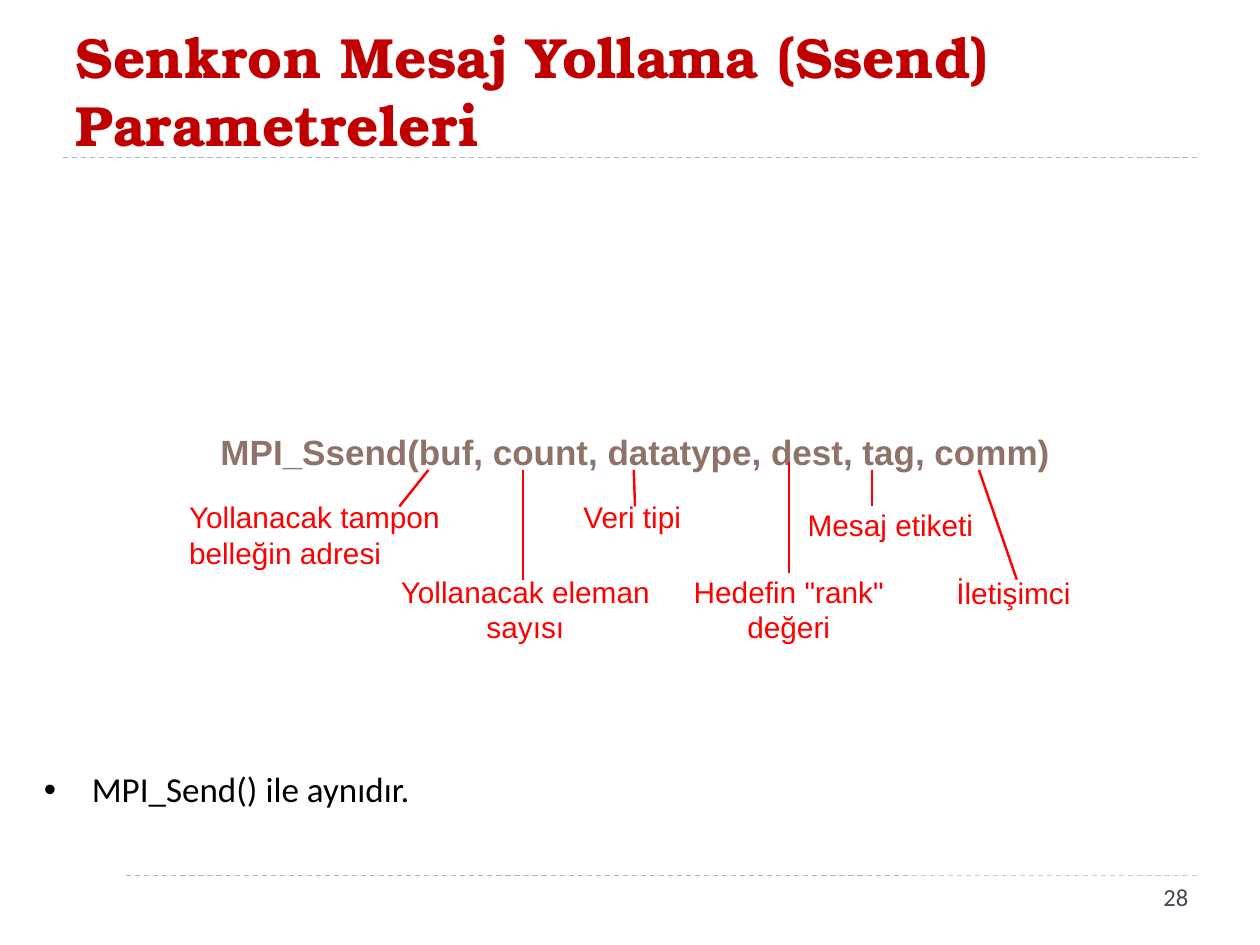
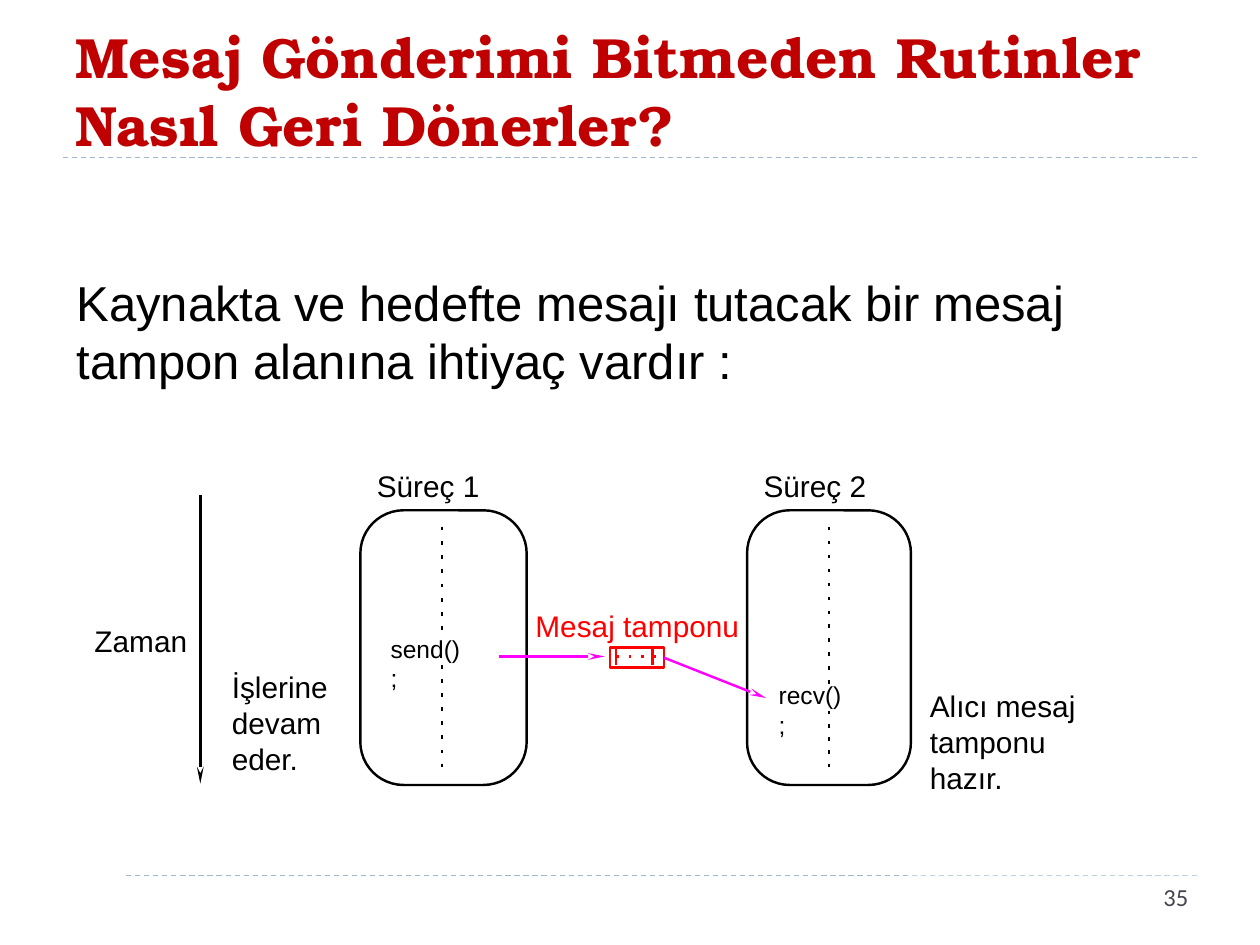
from lxml import etree
from pptx import Presentation
from pptx.dml.color import RGBColor
from pptx.enum.dml import MSO_LINE
from pptx.enum.shapes import MSO_CONNECTOR, MSO_SHAPE
from pptx.enum.text import MSO_ANCHOR, MSO_AUTO_SIZE, PP_ALIGN
from pptx.oxml.ns import qn
from pptx.util import Inches, Pt

STRAIGHT = MSO_CONNECTOR.STRAIGHT
RECTANGLE = MSO_SHAPE.RECTANGLE
ROUNDED = MSO_SHAPE.ROUNDED_RECTANGLE
DASH = MSO_LINE.DASH
LEFT, CENTER, RIGHT = PP_ALIGN.LEFT, PP_ALIGN.CENTER, PP_ALIGN.RIGHT
TOP, MIDDLE = MSO_ANCHOR.TOP, MSO_ANCHOR.MIDDLE
FIXED, GROW = MSO_AUTO_SIZE.NONE, MSO_AUTO_SIZE.SHAPE_TO_FIT_TEXT
TOP_SIDE, RIGHT_SIDE = 0, 3

COLORS = {
    "title": "C00000",
    "rule": "9FB8CD",
    "paper": "FFFFFF",
    "number": "464653",
    "call": "8E736A",
    "red": "FF0000",
    "ink": "000000",
    "message": "FF00FF",
}


def color(name):
    return RGBColor.from_string(COLORS[name])


def write(frame, text, size=17, font="Arial", ink="ink", bold=False, align=LEFT):
    para = frame.paragraphs[0]
    para.alignment = align
    for index, line in enumerate(text.split("\n")):
        if index:
            para.add_line_break()
        span = para.add_run()
        span.text = line
        span.font.size = Pt(size)
        span.font.name = font
        span.font.bold = bold
        span.font.color.rgb = color(ink)
    return para


class Lecture:
    def __init__(self):
        self.deck = Presentation()
        self.deck.slide_width = Inches(10)
        self.deck.slide_height = Inches(7.5)
        self.page = None

    def start_page(self, title, number):
        self.page = self.deck.slides.add_slide(self.deck.slide_layouts[5])
        for height in (6.95, 1.25):
            self.line((0.5, height), (9.5, height), "rule", width=0.75, dash=DASH)
        self.shape(RECTANGLE, 0.35, 6.82, 0.63, 0.63, fill="paper")
        self.title(title)
        box = self.shape(RECTANGLE, 7.2, 6.95, 2.33, 0.4, fill="paper")
        box.text_frame.vertical_anchor = TOP
        write(box.text_frame, str(number), size=14, font="Calibri", ink="number", align=RIGHT)

    def title(self, text):
        box = self.page.shapes.title
        box.left, box.top = Inches(0.5), Inches(0.17)
        box.width, box.height = Inches(9), Inches(1.08)
        frame = box.text_frame
        frame.word_wrap = True
        frame.auto_size = FIXED
        frame.vertical_anchor = MIDDLE
        write(frame, text, size=32.4, font="TeX Gyre Bonum", ink="title", bold=True)

    def label(self, text, left, top, width, height, wrap=False, **style):
        box = self.page.shapes.add_textbox(
            Inches(left), Inches(top), Inches(width), Inches(height))
        frame = box.text_frame
        frame.word_wrap = wrap
        frame.auto_size = GROW
        frame.margin_left = frame.margin_right = 0
        frame.margin_top = frame.margin_bottom = 0
        write(frame, text, **style)
        return box

    def body(self, text, left, top, width, height, bullet=False, **style):
        box = self.page.shapes.add_textbox(
            Inches(left), Inches(top), Inches(width), Inches(height))
        box.text_frame.word_wrap = True
        para = write(box.text_frame, text, **style)
        if bullet:
            para.line_spacing = 0.9
            properties = para._p.get_or_add_pPr()
            properties.set("marL", str(Inches(0.38)))
            properties.set("indent", str(-Inches(0.38)))
            etree.SubElement(properties, qn("a:buFont"), typeface="Arial")
            etree.SubElement(properties, qn("a:buChar"), char="•")

    def shape(self, kind, left, top, width, height, fill=None, line=None):
        box = self.page.shapes.add_shape(
            kind, Inches(left), Inches(top), Inches(width), Inches(height))
        box.shadow.inherit = False
        if fill:
            box.fill.solid()
            box.fill.fore_color.rgb = color(fill)
        else:
            box.fill.background()
        if line:
            box.line.color.rgb = color(line)
            box.line.width = Pt(1.38)
        else:
            box.line.fill.background()
        return box

    def line(self, start, end, ink="ink", width=1.38, dash=None, arrow=False):
        link = self.page.shapes.add_connector(
            STRAIGHT, *(Inches(value) for value in (*start, *end)))
        link.line.color.rgb = color(ink)
        link.line.width = Pt(width)
        if dash:
            link.line.dash_style = dash
        if arrow:
            etree.SubElement(link.line._get_or_add_ln(), qn("a:tailEnd"),
                             type="stealth", w="sm", len="lg")
        etree.SubElement(link._element.spPr, qn("a:effectLst"))
        return link

    def ticks(self, center, first, last, count):
        pitch = (last - first) / (count - 1)
        for index in range(count):
            top = first + index * pitch
            self.line((center, top), (center, top + 0.03))


def build_parameters(lecture):
    lecture.start_page("Senkron Mesaj Yollama (Ssend) Parametreleri", 28)
    lecture.label("MPI_Ssend(buf, count, datatype, dest, tag, comm)",
                  1.75, 3.42, 6.63, 0.34, size=20, ink="call", bold=True)
    parameters = [
        ("Yollanacak tampon\nbelleğin adresi", (1.5, 3.96, 2.01, 0.57), LEFT,
         (3.4, 3.73), (3.17, 4.02)),
        ("Yollanacak eleman\nsayısı", (3.17, 4.55, 2, 0.57), CENTER,
         (4.15, 3.73), (4.15, 4.6)),
        ("Veri tipi", (4.63, 3.96, 0.78, 0.29), LEFT, (5.03, 3.73), (5.04, 4.02)),
        ("Mesaj etiketi", (6.41, 4.02, 1.33, 0.29), LEFT, (6.92, 3.73), (6.92, 4.02)),
        ("İletişimci", (7.59, 4.56, 0.91, 0.29), LEFT, (7.77, 3.73), (8.07, 4.6)),
    ]
    for text, place, align, start, end in parameters:
        lecture.label(text, *place, ink="red", align=align)
        lecture.line(start, end, "red")
    target = lecture.label('Hedefin "rank"\ndeğeri', 5.5, 4.55, 1.52, 0.57,
                           ink="red", align=CENTER)
    lecture.line((6.26, 3.67), (6.26, 4.55), "red").end_connect(target, TOP_SIDE)
    lecture.body("MPI_Send() ile aynıdır.", 0.25, 6.08, 9.58, 0.75,
                 bullet=True, size=20, font="Calibri")


def build_buffering(lecture):
    lecture.start_page("Mesaj Gönderimi Bitmeden Rutinler Nasıl Geri Dönerler?", 35)
    lecture.body("Kaynakta ve hedefte mesajı tutacak bir mesaj tampon alanına ihtiyaç vardır :",
                 0.51, 2.11, 8.98, 1.04, size=28)

    processes = [
        ("Süreç 1", 2.99, 2.86, 1.32, 3.51, [(4.18, 4.97, 8), (5.28, 6.06, 8)]),
        ("Süreç 2", 6.06, 5.93, 1.3, 6.58, [(4.18, 5.4, 12), (5.64, 6.06, 5)]),
    ]
    for name, name_left, left, width, center, runs in processes:
        lecture.label(name, name_left, 3.71, 0.82, 0.29)
        lecture.shape(ROUNDED, left, 4.05, width, 2.18, line="ink").adjustments[0] = 0.26
        for run in runs:
            lecture.ticks(center, *run)
    lecture.label("send();", 3.1, 5.03, 0.6, 0.23, wrap=True, size=14)
    lecture.label("recv();", 6.18, 5.4, 0.55, 0.23, wrap=True, size=14)

    lecture.label("Mesaj tamponu", 4.25, 4.82, 1.63, 0.29, ink="red")
    buffer = lecture.shape(RECTANGLE, 4.84, 5.14, 0.43, 0.16, line="red")
    for left in (4.89, 5.18):
        lecture.line((left, 5.13), (left, 5.28), "red")
    for index in range(4):
        left = 4.89 + index * 0.1
        lecture.line((left, 5.21), (left + 0.02, 5.21), "red")
    lecture.line((3.96, 5.21), (4.8, 5.21), "message", arrow=True)
    delivery = lecture.line((5.27, 5.22), (6.08, 5.54), "message", arrow=True)
    delivery.begin_connect(buffer, RIGHT_SIDE)

    lecture.line((1.59, 3.93), (1.59, 6.22), arrow=True)
    lecture.label("Zaman", 0.75, 4.94, 0.74, 0.29)
    lecture.label("İşlerine\ndevam\neder.", 1.84, 5.31, 0.8, 0.86)
    lecture.label("Alıcı mesaj\ntamponu\nhazır.", 7.38, 5.46, 1.23, 0.86)


def main():
    lecture = Lecture()
    build_parameters(lecture)
    build_buffering(lecture)
    lecture.deck.save("out.pptx")


if __name__ == "__main__":
    main()
